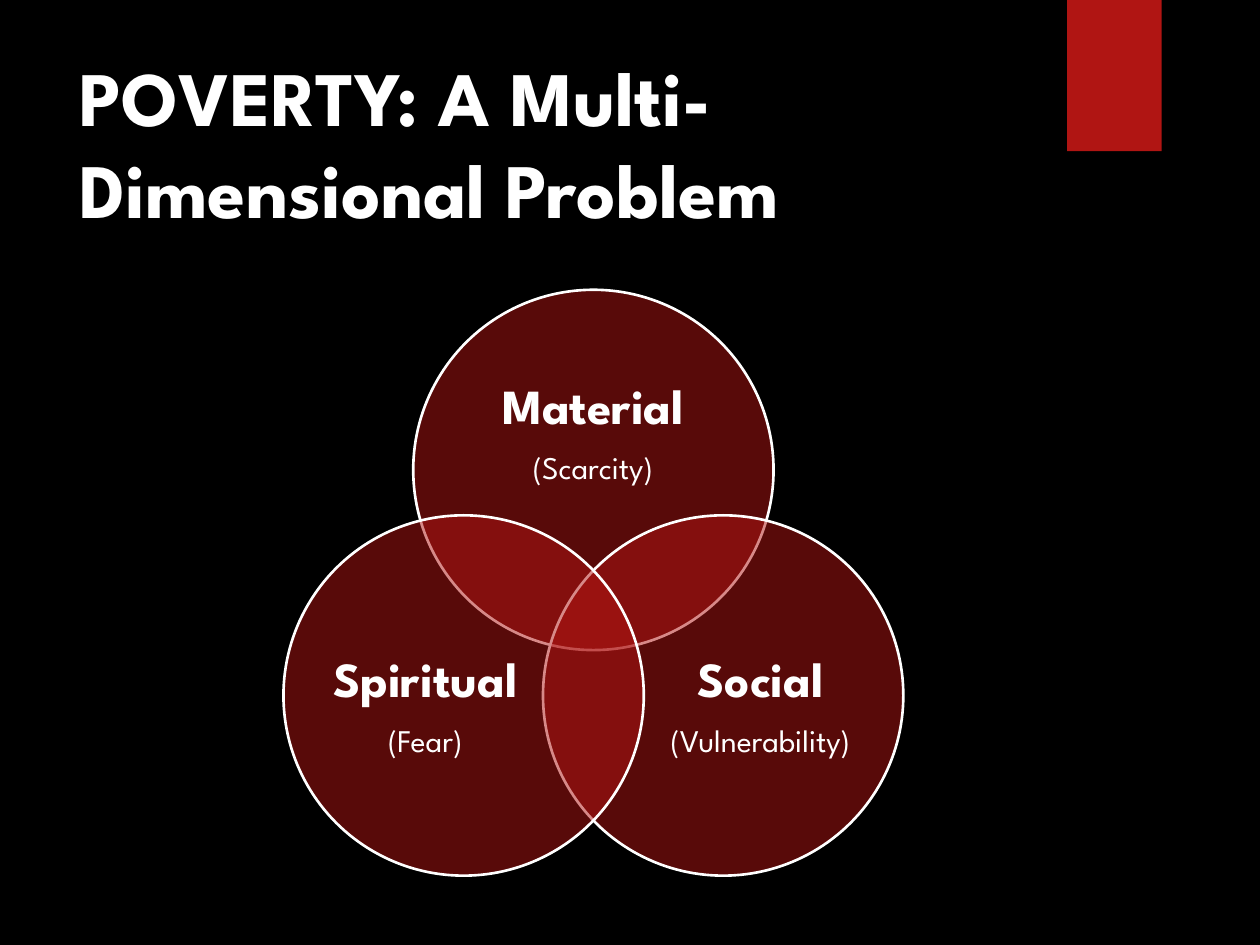
from pptx import Presentation
from pptx.dml.color import RGBColor
from pptx.enum import shapes, text
from pptx.oxml import parse_xml
from pptx.oxml.ns import nsdecls, qn
from pptx.util import Inches, Pt

FONT = "League Spartan"
RED, WHITE, BLACK = "B01513", "FFFFFF", "000000"


def paint(color_format, hex_color):
    color_format.rgb = RGBColor.from_string(hex_color)


def style_runs(paragraph, size, bold):
    for run in paragraph.runs:
        run.font.name = FONT
        run.font.size = Pt(size)
        run.font.bold = bold
        paint(run.font.color, WHITE)


prs = Presentation()
prs.slide_width, prs.slide_height = Inches(10), Inches(7.5)
slide = prs.slides.add_slide(prs.slide_layouts[5])
slide.background.fill.solid()
paint(slide.background.fill.fore_color, BLACK)

# Red tab at the top edge
tab = slide.shapes.add_shape(shapes.MSO_SHAPE.RECTANGLE,
                             Inches(8.47), 0, Inches(0.75), Inches(1.2))
tab.shadow.inherit = False
tab.fill.solid()
paint(tab.fill.fore_color, RED)
tab.line.fill.background()

# Title
title = slide.shapes.title
title.left, title.top = Inches(0.53), Inches(0.36)
title.width, title.height = Inches(7.72), Inches(1.53)
title.text_frame.text = "POVERTY: A Multi-Dimensional Problem"
title.text_frame.vertical_anchor = text.MSO_ANCHOR.MIDDLE
title.text_frame.paragraphs[0].alignment = text.PP_ALIGN.LEFT
style_runs(title.text_frame.paragraphs[0], 44, True)

# Venn diagram: circle position, then label box and its two lines
DIAMETER = Inches(2.86)
dimensions = [
    ((3.28, 2.3), (3.66, 2.8, 2.09, 1.29), "Material", "(Scarcity)"),
    ((4.31, 4.09), (5.18, 4.83, 1.71, 1.57), "Social", "(Vulnerability)"),
    ((2.25, 4.09), (2.52, 4.83, 1.71, 1.57), "Spiritual", "(Fear)"),
]
for (left, top), label_box, name, feeling in dimensions:
    circle = slide.shapes.add_shape(shapes.MSO_SHAPE.OVAL, Inches(left), Inches(top),
                                    DIAMETER, DIAMETER)
    circle.shadow.inherit = False
    circle.fill.solid()
    paint(circle.fill.fore_color, RED)
    fill_color = circle.fill._xPr.find(qn("a:solidFill"))[0]
    fill_color.append(parse_xml(f'<a:alpha {nsdecls("a")} val="50000"/>'))
    paint(circle.line.color, WHITE)
    circle.line.width = Pt(1.5)

    label = slide.shapes.add_textbox(*map(Inches, label_box)).text_frame
    label.word_wrap = True
    label.vertical_anchor = text.MSO_ANCHOR.MIDDLE
    label.margin_left = label.margin_right = label.margin_top = label.margin_bottom = 0
    label.text = f"{name}\n{feeling}"
    for paragraph, size, bold in zip(label.paragraphs, (28, 18), (True, False)):
        paragraph.alignment = text.PP_ALIGN.CENTER
        paragraph.line_spacing = 0.9
        paragraph.space_after = Pt(round(size * 0.35))
        style_runs(paragraph, size, bold)

prs.save("out.pptx")
